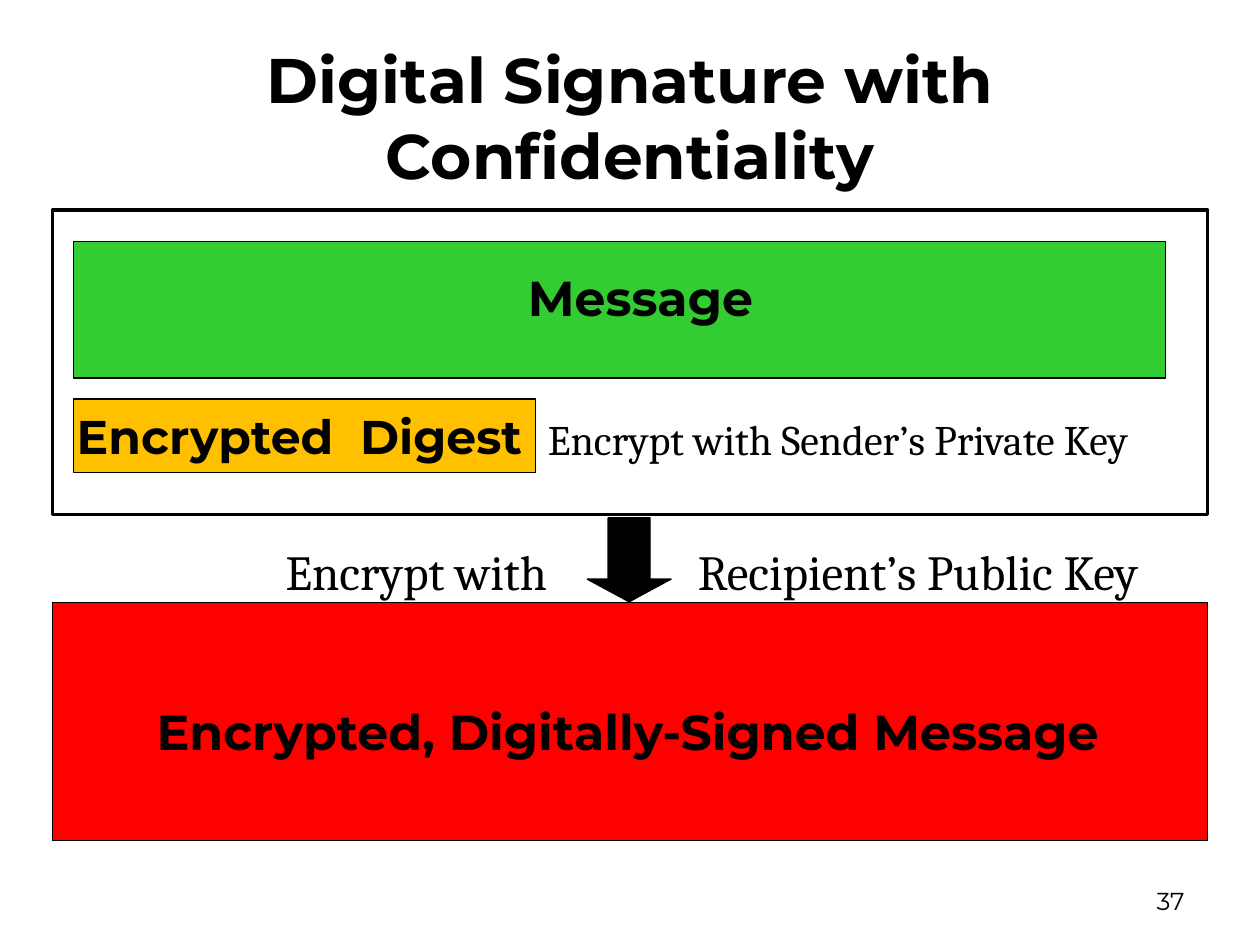
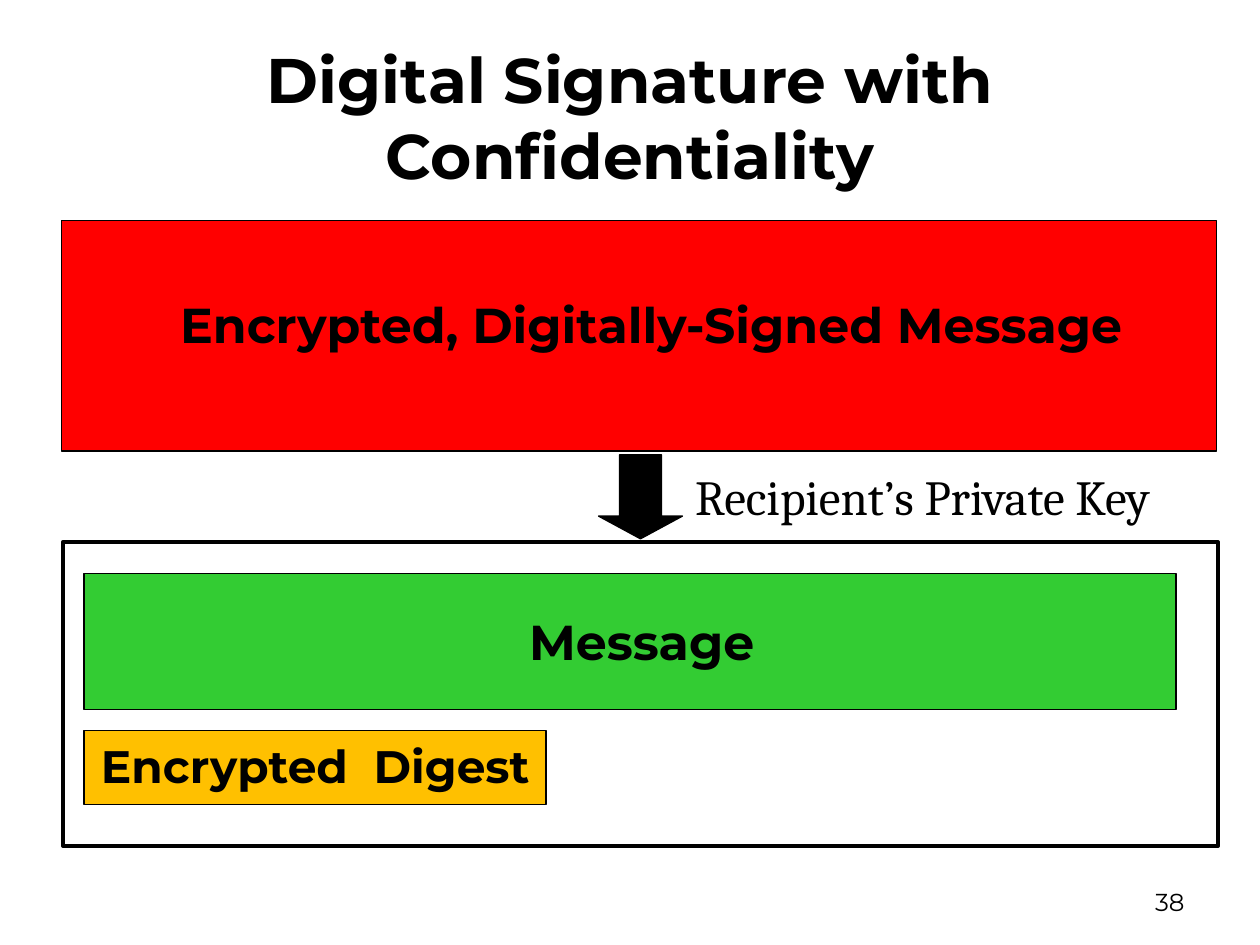
from pptx import Presentation
from pptx.dml.color import RGBColor
from pptx.enum import shapes, text
from pptx.util import Pt

COLORS = {"ink": "000000", "message": "33CC33", "digest": "FFC000", "encrypted": "FF0000"}
HEADING, BODY = "Montserrat", "Cambria"
LEFT, CENTER, RIGHT = text.PP_ALIGN.LEFT, text.PP_ALIGN.CENTER, text.PP_ALIGN.RIGHT
WIDE, NARROW = (7.2, 3.6), (6, 3)

TITLE = "Digital Signature with Confidentiality"
MESSAGE = "Message"
DIGEST = "Encrypted  Digest"
ENCRYPTED = "Encrypted, Digitally-Signed Message"

STAGES = [
    {
        "number": "37", "number_top": 500.4,
        "bundle": (30, 120), "encrypted": (30, 344.2, 660, 136), "arrow": (335.5, 295.9),
        "headings": [
            (MESSAGE, (198, 150, 336, 39.6), 28, CENTER, NARROW),
            (DIGEST, (36, 229.7, 270, 38.9), 27, CENTER, NARROW),
            (ENCRYPTED, (28.1, 397.4, 661, 41), 28, CENTER, WIDE),
        ],
        "keys": [
            ("Recipient’s Public Key", (391.7, 306, 292.3, 41), 28, LEFT, WIDE),
            ("Encrypt with Sender’s Private Key", (306, 232.6, 378, 36), 24, LEFT, WIDE),
            ("Encrypt with", (87.8, 306, 231.8, 41), 28, RIGHT, WIDE),
        ],
    },
    {
        "number": "38", "number_top": 501.1,
        "bundle": (36, 309.6), "encrypted": (35.3, 126, 660, 131.8), "arrow": (342, 259.9),
        "headings": [
            (MESSAGE, (198.7, 346.3, 336, 39.6), 28, CENTER, NARROW),
            (DIGEST, (48.2, 419, 264.2, 37.4), 26, CENTER, NARROW),
            (ENCRYPTED, (95.8, 164.9, 588.2, 41), 28, LEFT, WIDE),
        ],
        "keys": [("Recipient’s Private Key", (390.2, 262.8, 318.2, 41), 28, LEFT, WIDE)],
    },
]


def color(name):
    return RGBColor.from_string(COLORS[name])


def add_block(slide, box, fill=None, line=0.75, kind=shapes.MSO_SHAPE.RECTANGLE):
    block = slide.shapes.add_shape(kind, *map(Pt, box))
    block.shadow.inherit = False
    if fill:
        block.fill.solid()
        block.fill.fore_color.rgb = color(fill)
    else:
        block.fill.background()
    block.line.color.rgb = color("ink")
    block.line.width = Pt(line)
    return block


def add_label(slide, wording, box, size, align, inset=WIDE, font=HEADING,
              bold=False, anchor=text.MSO_ANCHOR.TOP):
    frame = slide.shapes.add_textbox(*map(Pt, box)).text_frame
    frame.word_wrap = True
    frame.vertical_anchor = anchor
    frame.margin_left = frame.margin_right = Pt(inset[0])
    frame.margin_top = frame.margin_bottom = Pt(inset[1])
    line = frame.paragraphs[0]
    line.text = wording
    line.alignment = align
    line.font.name = font
    line.font.size = Pt(size)
    line.font.bold = bold
    line.font.color.rgb = color("ink")


def add_bundle(slide, left, top):
    add_block(slide, (left + 12, top + 18, 624, 78), "message")
    add_block(slide, (left + 12, top + 108, 264, 42), "digest")
    add_block(slide, (left, top, 660, 174), line=2)


def add_arrow(slide, left, top):
    arrow = add_block(slide, (left, top, 48, 48), "ink", kind=shapes.MSO_SHAPE.DOWN_ARROW)
    arrow.adjustments[0] = 0.5
    arrow.adjustments[1] = 0.27


def add_stage(deck, stage):
    slide = deck.slides.add_slide(deck.slide_layouts[6])
    middle = text.MSO_ANCHOR.MIDDLE
    add_label(slide, TITLE, (36, 21.6, 648, 90), 36, CENTER, bold=True, anchor=middle)
    add_label(slide, stage["number"], (516, stage["number_top"], 168, 28.8), 14, RIGHT,
              anchor=middle)
    add_bundle(slide, *stage["bundle"])
    add_block(slide, stage["encrypted"], "encrypted")
    add_arrow(slide, *stage["arrow"])
    for heading in stage["headings"]:
        add_label(slide, *heading, bold=True)
    for key in stage["keys"]:
        add_label(slide, *key, font=BODY)


def main():
    deck = Presentation()
    deck.slide_width, deck.slide_height = Pt(720), Pt(540)
    for stage in STAGES:
        add_stage(deck, stage)
    deck.save("out.pptx")


if __name__ == "__main__":
    main()
